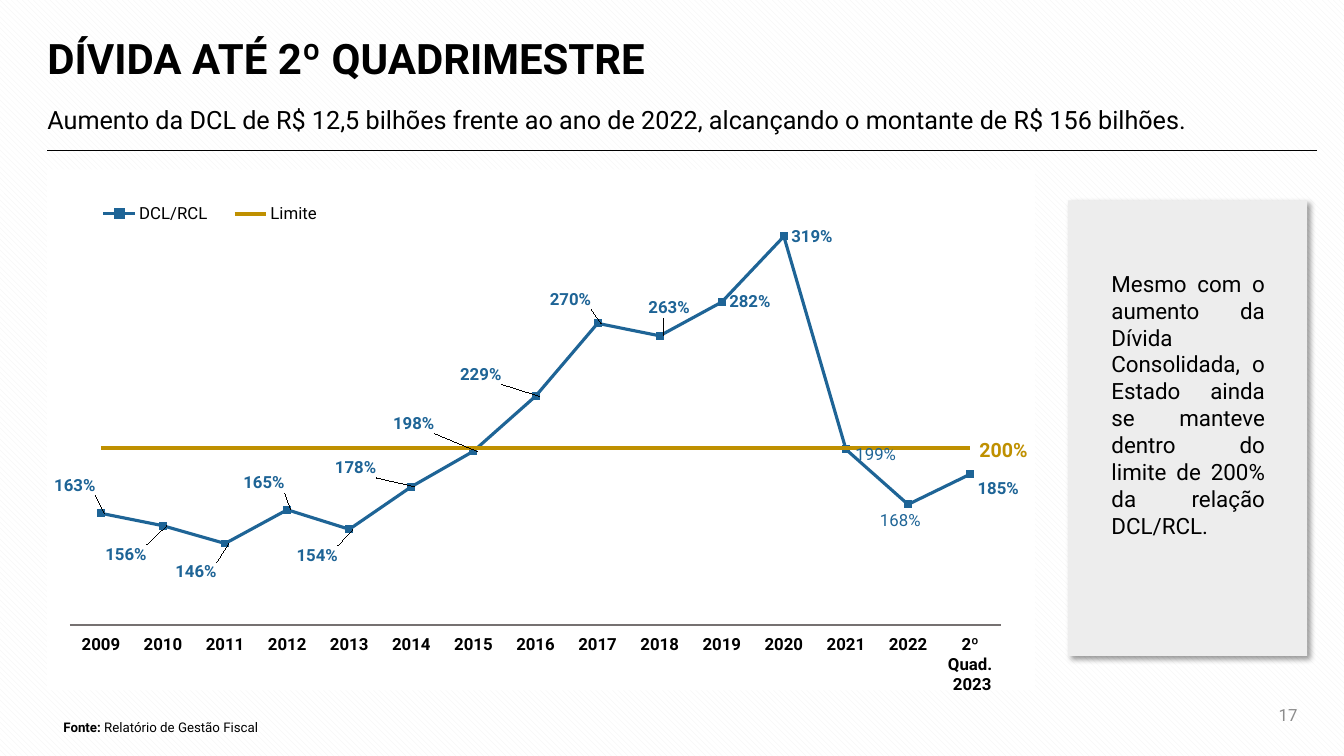
from lxml import etree
from pptx import Presentation
from pptx.chart.data import CategoryChartData
from pptx.dml.color import RGBColor
from pptx.enum.chart import (XL_CHART_TYPE, XL_LABEL_POSITION, XL_LEGEND_POSITION,
                             XL_MARKER_STYLE, XL_TICK_LABEL_POSITION, XL_TICK_MARK)
from pptx.enum.dml import MSO_PATTERN
from pptx.enum.shapes import MSO_CONNECTOR, MSO_SHAPE
from pptx.enum.text import MSO_ANCHOR, PP_ALIGN
from pptx.oxml import parse_xml
from pptx.oxml.ns import qn
from pptx.util import Cm, Pt

LEFT, RIGHT, JUSTIFY = PP_ALIGN.LEFT, PP_ALIGN.RIGHT, PP_ALIGN.JUSTIFY
TOP, MIDDLE = MSO_ANCHOR.TOP, MSO_ANCHOR.MIDDLE
LABEL_RIGHT = XL_LABEL_POSITION.RIGHT
NO_TICK = XL_TICK_MARK.NONE
FONT, BLUE, GOLD, BLACK = "Roboto", "1E6496", "BF9000", "000000"
NS_A = 'xmlns:a="http://schemas.openxmlformats.org/drawingml/2006/main"'
NS_C = 'xmlns:c="http://schemas.openxmlformats.org/drawingml/2006/chart"'


def rgb(value):
    return RGBColor.from_string(value)


def write(s, box, runs, size, color=BLACK, align=LEFT, anchor=TOP, spacing=None):
    """Place a text shape and fill it with (text, bold) runs."""
    s.left, s.top, s.width, s.height = (Cm(v) for v in box)
    tf = s.text_frame
    tf.word_wrap = True
    tf.vertical_anchor = anchor
    p = tf.paragraphs[0]
    p.alignment = align
    if spacing:
        p.line_spacing = spacing
    for text, bold in runs:
        r = p.add_run()
        r.text = text
        r.font.name, r.font.size, r.font.bold = FONT, Pt(size), bold
        r.font.color.rgb = rgb(color)


prs = Presentation()
prs.slide_width, prs.slide_height = Cm(33.87), Cm(19.05)
slide = prs.slides.add_slide(prs.slide_layouts[1])
shapes = slide.shapes

# Background
fill = slide.background.fill
fill.patterned()
fill.pattern = MSO_PATTERN.WIDE_DOWNWARD_DIAGONAL
fill.fore_color.rgb, fill.back_color.rgb = rgb("F2F2F2"), rgb("FFFFFF")

# Title and subtitle
write(shapes.title, (0.94, 0.53, 19.94, 2.01), [("DÍVIDA ATÉ 2º QUADRIMESTRE", True)],
      30, anchor=MIDDLE, spacing=0.9)
body = slide.placeholders[1]
pPr = body.text_frame.paragraphs[0]._p.get_or_add_pPr()
pPr.set("marL", "0")
pPr.set("indent", "0")
etree.SubElement(pPr, qn("a:buNone"))
write(body, (0.94, 2.18, 32, 1.5),
      [("Aumento da DCL de R$ 12,5 bilhões frente ao ano de 2022, "
        "alcançando o montante de R$ 156 bilhões.", False)],
      18, anchor=MIDDLE, spacing=1.2)
body.text_frame.paragraphs[0].space_before = Pt(0)

rule = shapes.add_connector(MSO_CONNECTOR.STRAIGHT, Cm(1.19), Cm(3.78), Cm(33.2), Cm(3.78))
rule.line.color.rgb, rule.line.width = rgb(BLACK), Pt(0.5)
etree.SubElement(rule._element.spPr, qn("a:effectLst"))

# Side panel
panel = shapes.add_shape(MSO_SHAPE.RECTANGLE, Cm(26.92), Cm(5.05), Cm(6.02), Cm(11.48))
panel.fill.solid()
panel.fill.fore_color.rgb = rgb("EDEDED")
panel.line.fill.background()
panel._element.spPr.append(parse_xml(
    f'<a:effectLst {NS_A}><a:outerShdw blurRad="50800" dist="38100" dir="2700000" '
    'algn="tl" rotWithShape="0"><a:srgbClr val="000000"><a:alpha val="40000"/>'
    '</a:srgbClr></a:outerShdw></a:effectLst>'))
write(shapes.add_textbox(0, 0, 0, 0), (27.76, 6.68, 4.37, 7.09),
      [("Mesmo com o aumento da Dívida Consolidada, o Estado ainda se manteve "
        "dentro do limite de 200% da relação DCL/RCL.", False)], 16, align=JUSTIFY)

# Chart
ratios = [1.63, 1.56, 1.46, 1.65, 1.54, 1.78, 1.98, 2.29, 2.7, 2.63, 2.82, 3.19,
          1.99, 1.68, 1.85]
data = CategoryChartData(number_format="0%")
data.categories = [str(year) for year in range(2009, 2023)] + ["2º Quad.\n 2023"]
data.add_series("DCL/RCL", ratios)
data.add_series("Limite", [2] * len(ratios))
chart = shapes.add_chart(XL_CHART_TYPE.LINE_MARKERS, Cm(1.19), Cm(4.27), Cm(24.89),
                         Cm(13.23), data).chart
chart.has_title = False
chart.font.name, chart.font.size, chart.font.color.rgb = FONT, Pt(10), rgb(BLACK)
chart._chartSpace.find(qn("c:chart")).addnext(parse_xml(
    f'<c:spPr {NS_C} {NS_A}><a:solidFill><a:srgbClr val="FFFFFF"/></a:solidFill>'
    '<a:ln><a:noFill/></a:ln></c:spPr>'))

axis = chart.category_axis
axis.major_tick_mark = axis.minor_tick_mark = NO_TICK
axis.tick_label_position = XL_TICK_LABEL_POSITION.LOW
axis.format.line.color.rgb, axis.format.line.width = rgb("767171"), Pt(1.5)
font = axis.tick_labels.font
font.name, font.size, font.bold, font.color.rgb = FONT, Pt(12), True, rgb(BLACK)
values = chart.value_axis
values.minimum_scale, values.maximum_scale = 1, 3.5
values.has_major_gridlines = False
values.visible = False

ratio, limit = chart.plots[0].series
for series, color, width in ((ratio, BLUE, 2.25), (limit, GOLD, 2.75)):
    series.smooth = False
    series.format.line.color.rgb, series.format.line.width = rgb(color), Pt(width)
limit.marker.style = XL_MARKER_STYLE.NONE
marker = ratio.marker
marker.style, marker.size = XL_MARKER_STYLE.SQUARE, 5
marker.format.fill.solid()
marker.format.fill.fore_color.rgb = rgb(BLUE)
marker.format.line.color.rgb = rgb(BLUE)

# Data labels, shifted by fractions of the chart size
labels = ratio.data_labels
labels.show_value = True
labels.number_format, labels.number_format_is_linked = "0%", False
labels.position = LABEL_RIGHT
font = labels.font
font.name, font.size, font.bold, font.color.rgb = FONT, Pt(12), True, rgb(BLUE)
shifts = {0: (-0.055, -0.053), 1: (-0.066, 0.055), 2: (-0.058, 0.055),
          3: (-0.052, -0.051), 4: (-0.061, 0.05), 5: (-0.085, -0.036),
          6: (-0.089, -0.053), 7: (-0.084, -0.042), 8: (-0.056, -0.046),
          9: (-0.019, -0.053), 12: (0.002, 0.011), 13: (-0.036, 0.032), 14: (0, 0.027)}
for i, (dx, dy) in shifts.items():
    label = ratio.points[i].data_label
    label.position = LABEL_RIGHT
    font = label.font
    font.name, font.size, font.color.rgb = FONT, Pt(12), rgb(BLUE)
    font.bold = i not in (12, 13)
for dLbl in labels._element.findall(qn("c:dLbl")):
    idx = dLbl.find(qn("c:idx"))
    dx, dy = shifts[int(idx.get("val"))]
    idx.addnext(parse_xml(f'<c:numFmt {NS_C} formatCode="0%" sourceLinked="0"/>'))
    idx.addnext(parse_xml(f'<c:layout {NS_C}><c:manualLayout><c:x val="{dx}"/>'
                          f'<c:y val="{dy}"/></c:manualLayout></c:layout>'))

# Plot area and legend positions
chart.has_legend = True
legend = chart.legend
legend.position, legend.include_in_layout = XL_LEGEND_POSITION.RIGHT, False
legend.font.name, legend.font.size = FONT, Pt(12)
plot_area = chart._chartSpace.find(".//" + qn("c:plotArea"))
for old in plot_area.findall(qn("c:layout")):
    plot_area.remove(old)
for parent, index, target, (x, y, w, h) in (
        (plot_area, 0, '<c:layoutTarget val="inner"/>', (0.023, 0.023, 0.943, 0.852)),
        (legend._element, 1, "", (0.035, 0.05, 0.26, 0.07))):
    for old in parent.findall(qn("c:layout")):
        parent.remove(old)
    parent.insert(index, parse_xml(
        f'<c:layout {NS_C}><c:manualLayout>{target}<c:xMode val="edge"/>'
        f'<c:yMode val="edge"/><c:x val="{x}"/><c:y val="{y}"/><c:w val="{w}"/>'
        f'<c:h val="{h}"/></c:manualLayout></c:layout>'))

# Limit value, source and page number
write(shapes.add_textbox(0, 0, 0, 0), (24.43, 10.9, 2.08, 0.86), [("200%", True)], 14, GOLD)
write(shapes.add_textbox(0, 0, 0, 0), (1.35, 18.01, 7.54, 0.66),
      [("Fonte: ", True), ("Relatório de Gestão Fiscal", False)], 9.5)
write(shapes.add_textbox(0, 0, 0, 0), (30.51, 17.5, 2.44, 1.02), [("17", False)], 12,
      "8C8C8C", RIGHT, MIDDLE)

prs.save("out.pptx")
